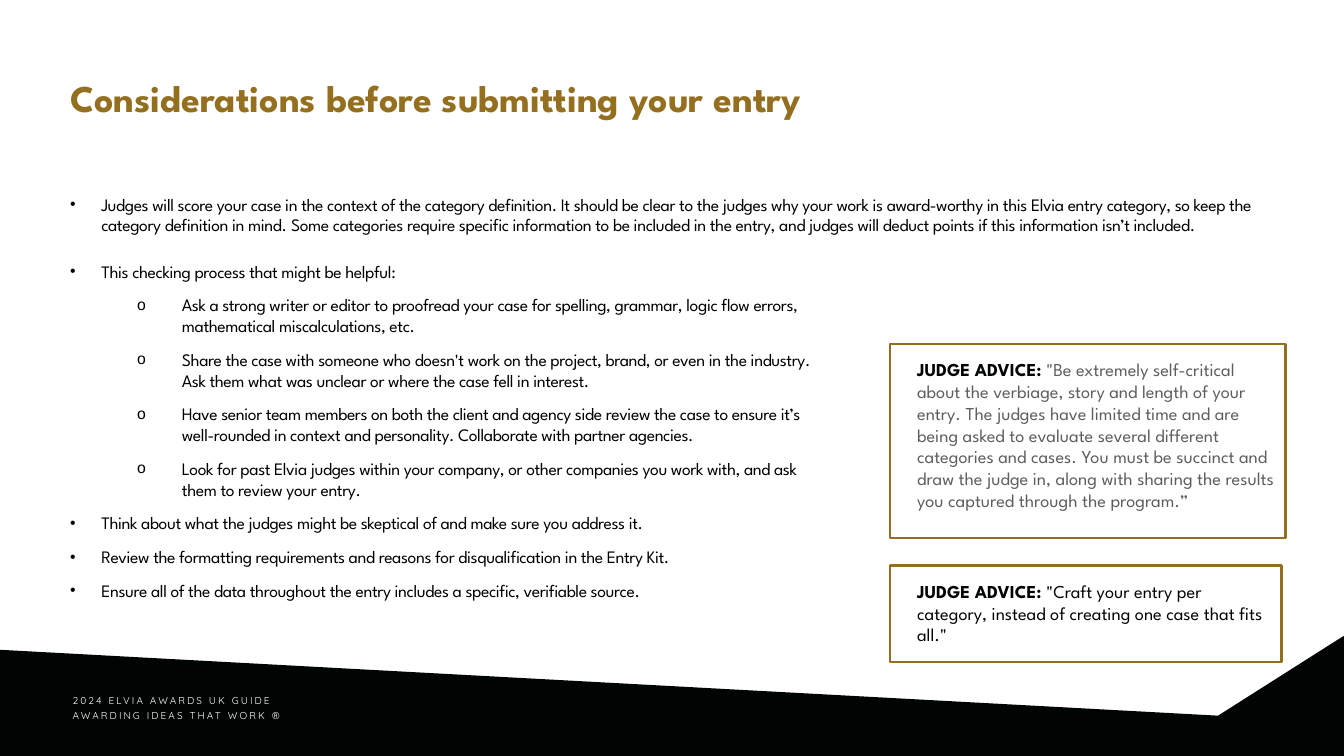
import pptx
import pptx.dml.color
import pptx.enum.text
import pptx.enum.shapes
import pptx.oxml
import pptx.oxml.ns
import pptx.util

Inches = pptx.util.Inches
Pt = pptx.util.Pt
RGBColor = pptx.dml.color.RGBColor
MSO_ANCHOR = pptx.enum.text.MSO_ANCHOR

GOLD = RGBColor(0x94, 0x6F, 0x1F)
INK = RGBColor(0x00, 0x04, 0x02)
BLACK = RGBColor(0x00, 0x00, 0x00)
GREY = RGBColor(0x5E, 0x5E, 0x5E)
WHITE = RGBColor(0xFF, 0xFF, 0xFF)
HEAD_FONT = "League Spartan"
FOOTER_FONT = "Quicksand"

# Paragraph level: bullet character, left margin and hanging indent in inches
BULLETS = {0: ("•", 0.62, 0.62), 2: ("o", 2.22, 0.89)}

TITLE = "Considerations before submitting your entry"
INTRO = [
    "Judges will score your case in the context of the category definition. It should be clear to "
    "the judges why your work is award-worthy in this Elvia entry category, so keep the category "
    "definition in mind. ",
    "Some categories require specific information to be included in the entry, and judges will "
    "deduct points if this information isn’t included.",
]
CHECKS = [
    (0, "This checking process that might be helpful:"),
    (2, "Ask a strong writer or editor to proofread your case for spelling, grammar, logic flow "
        "errors, mathematical miscalculations, etc."),
    (2, "Share the case with someone who doesn't work on the project, brand, or even in the "
        "industry. Ask them what was unclear or where the case fell in interest."),
    (2, "Have senior team members on both the client and agency side review the case to ensure "
        "it’s well-rounded in context and personality. Collaborate with partner agencies."),
    (2, "Look for past Elvia judges within your company, or other companies you work with, and "
        "ask them to review your entry."),
    (0, "Think about what the judges might be skeptical of and make sure you address it."),
    (0, "Review the formatting requirements and reasons for disqualification in the Entry Kit."),
    (0, "Ensure all of the data throughout the entry includes a specific, verifiable source."),
]
ADVICE_LONG = (
    "\"Be extremely self-critical about the verbiage, story and length of your entry. The judges "
    "have limited time and are being asked to evaluate several different categories and cases. "
    "You must be succinct and draw the judge in, along with sharing the results you captured "
    "through the program.”"
)
ADVICE_SHORT = "\"Craft your entry per category, instead of creating one case that fits all.\""


def place(shape, box):
    shape.left, shape.top, shape.width, shape.height = (Inches(value) for value in box)


def prepare_frame(text_frame, margins, anchor=MSO_ANCHOR.TOP):
    """Set wrapping, anchor and margins (left, top, right, bottom)."""
    text_frame.word_wrap = True
    text_frame.auto_size = pptx.enum.text.MSO_AUTO_SIZE.NONE
    text_frame.vertical_anchor = anchor
    (text_frame.margin_left, text_frame.margin_top,
     text_frame.margin_right, text_frame.margin_bottom) = map(Inches, margins)


def add_text_box(slide, box, margins, anchor=MSO_ANCHOR.TOP):
    text_box = slide.shapes.add_textbox(*map(Inches, box))
    prepare_frame(text_box.text_frame, margins, anchor)
    return text_box.text_frame


def add_run(paragraph, text, size, color, font=HEAD_FONT, bold=False, spacing=0):
    """Add a run; spacing is the letter spacing in points."""
    run = paragraph.add_run()
    run.text = text
    run.font.name = font
    run.font.size = Pt(size)
    run.font.bold = bold
    run.font.color.rgb = color
    if spacing:
        run.font._element.set("spc", str(round(spacing * 100)))


def set_bullet(paragraph, level):
    character, margin, hanging = BULLETS[level]
    paragraph.level = level
    properties = paragraph._p.get_or_add_pPr()
    properties.set("marL", str(Inches(margin)))
    properties.set("indent", str(-Inches(hanging)))
    namespace = pptx.oxml.ns.nsdecls("a")
    for tag in ('buSzPct {} val="90000"', 'buFont {} typeface="Arial"',
                'buChar {} char="' + character + '"'):
        properties.append(pptx.oxml.parse_xml("<a:" + tag.format(namespace) + "/>"))


def fill_bullets(text_frame, items):
    """Write (level, [(text, colour), ...]) items as bulleted paragraphs."""
    for index, (level, parts) in enumerate(items):
        paragraph = text_frame.add_paragraph() if index else text_frame.paragraphs[0]
        set_bullet(paragraph, level)
        paragraph.space_before = Pt(18 if index else 0)
        for text, color in parts:
            add_run(paragraph, text, 25, color, spacing=-0.5)


def add_footer(slide, top):
    """Draw the slanted band and its two lines, with top at the band's highest point."""
    outline = [(-0.05, 0.27), (-0.05, 2.43), (13.07, 2.42), (26.72, 2.51),
               (27.74, 1.38), (26.66, 0), (24.17, 1.58)]
    points = [(Inches(x), Inches(top + y)) for x, y in outline]
    builder = slide.shapes.build_freeform(*points[0])
    builder.add_line_segments(points[1:], close=True)
    band = builder.convert_to_shape()
    band.shadow.inherit = False
    band.fill.solid()
    band.fill.fore_color.rgb = INK
    band.line.fill.background()

    text_frame = add_text_box(slide, (1.39, top + 1.04, 22.09, 0.7), [0.05] * 4,
                              MSO_ANCHOR.MIDDLE)
    first = text_frame.paragraphs[0]
    second = text_frame.add_paragraph()
    add_run(first, "2024 ELVIA AWARDS UK GUIDE", 14.3, WHITE, FOOTER_FONT, spacing=3)
    add_run(second, "AWARDING IDEAS THAT WORK ", 14.3, WHITE, FOOTER_FONT, spacing=3)
    add_run(second, "®", 14.3, WHITE, "Arial", spacing=0.8)
    for paragraph in (first, second):
        paragraph.line_spacing = 1.3


def add_title(slide, box):
    title = slide.shapes.title
    place(title, box)
    prepare_frame(title.text_frame, [0.06] * 4, MSO_ANCHOR.MIDDLE)
    paragraph = title.text_frame.paragraphs[0]
    paragraph.alignment = pptx.enum.text.PP_ALIGN.LEFT
    add_run(paragraph, TITLE, 54, GOLD, bold=True)


def add_checklist(slide, box):
    body = slide.placeholders[1]
    place(body, box)
    prepare_frame(body.text_frame, [0.06] * 4)
    fill_bullets(body.text_frame, [(level, [(text, BLACK)]) for level, text in CHECKS])


def add_intro(slide, box):
    text_frame = add_text_box(slide, box, [0.06] * 4)
    fill_bullets(text_frame, [(0, list(zip(INTRO, (BLACK, INK))))])


def add_advice(slide, box, quote, color):
    """Draw a gold frame filling the box, with a judge's quote inside it."""
    left, top, width, height = box
    frame = slide.shapes.add_shape(pptx.enum.shapes.MSO_SHAPE.RECTANGLE, *map(Inches, box))
    frame.shadow.inherit = False
    frame.fill.background()
    frame.line.color.rgb = GOLD
    frame.line.width = Pt(3)

    text_frame = add_text_box(slide, (left + 0.5, top + 0.22, width - 0.6, height - 0.3),
                              (0.03, 0.07, 0, 0))
    paragraph = text_frame.paragraphs[0]
    add_run(paragraph, "JUDGE ADVICE: ", 26, INK, bold=True)
    add_run(paragraph, quote, 26, color)


def main():
    presentation = pptx.Presentation()
    presentation.slide_width = Inches(26.67)
    presentation.slide_height = Inches(15)
    slide = presentation.slides.add_slide(presentation.slide_layouts[1])
    add_footer(slide, 12.62)
    add_title(slide, (1.33, 1.43, 17.9, 1.02))
    add_intro(slide, (1.33, 3.78, 23.83, 1.2))
    add_checklist(slide, (1.33, 5.11, 15, 7.87))
    add_advice(slide, (17.67, 6.82, 7.84, 3.85), ADVICE_LONG, GREY)
    add_advice(slide, (17.67, 11.22, 7.76, 1.92), ADVICE_SHORT, INK)
    presentation.save("out.pptx")


if __name__ == "__main__":
    main()
